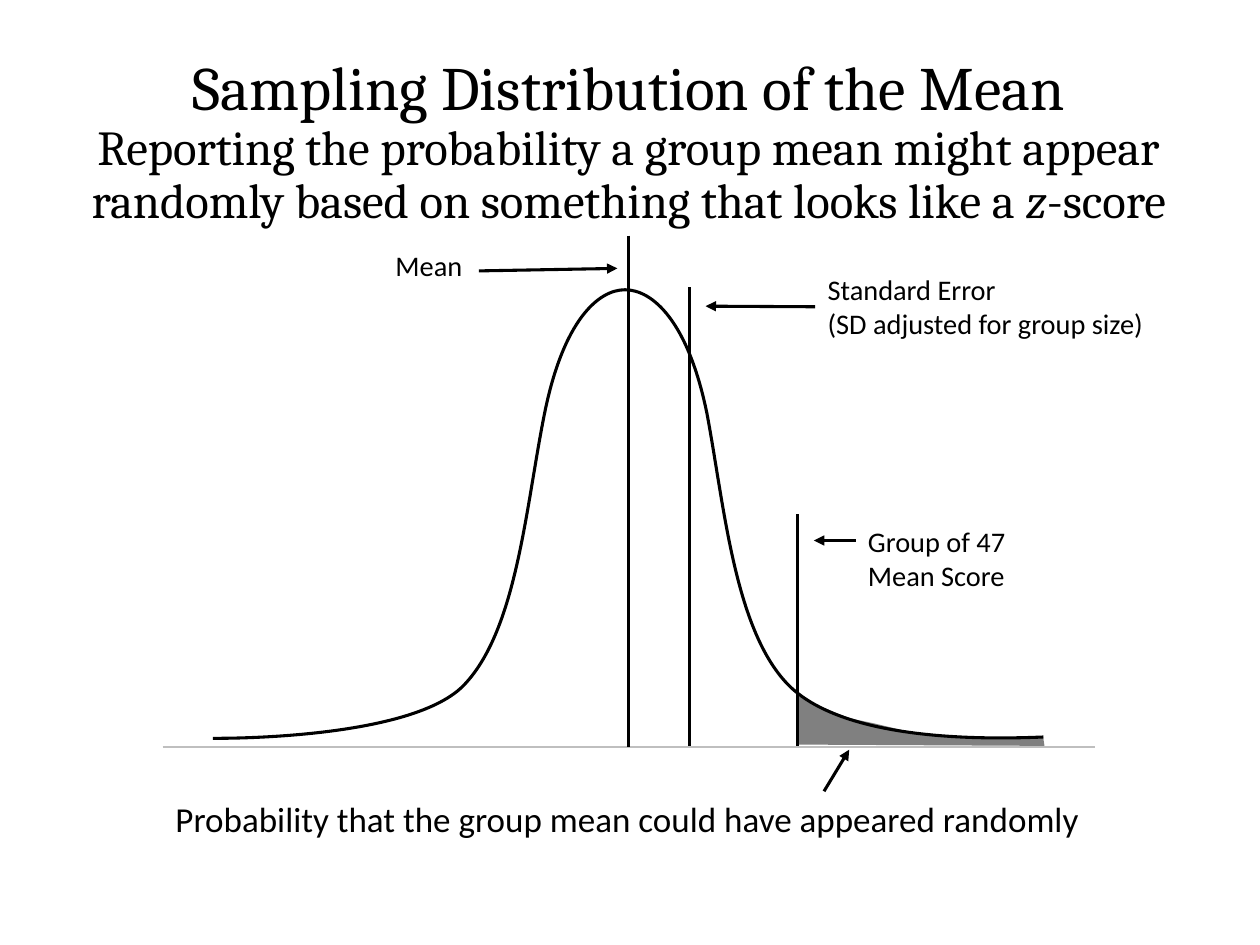
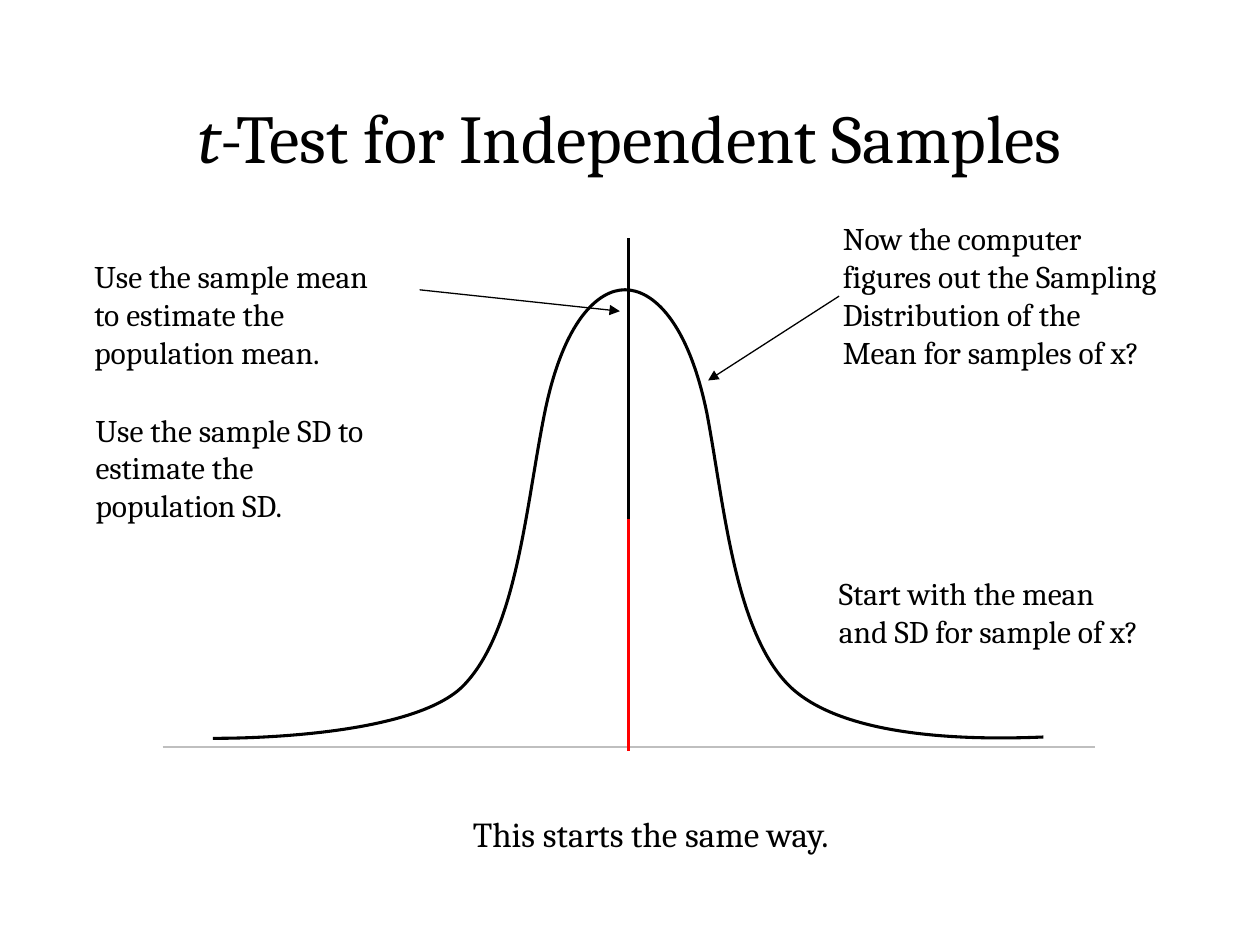
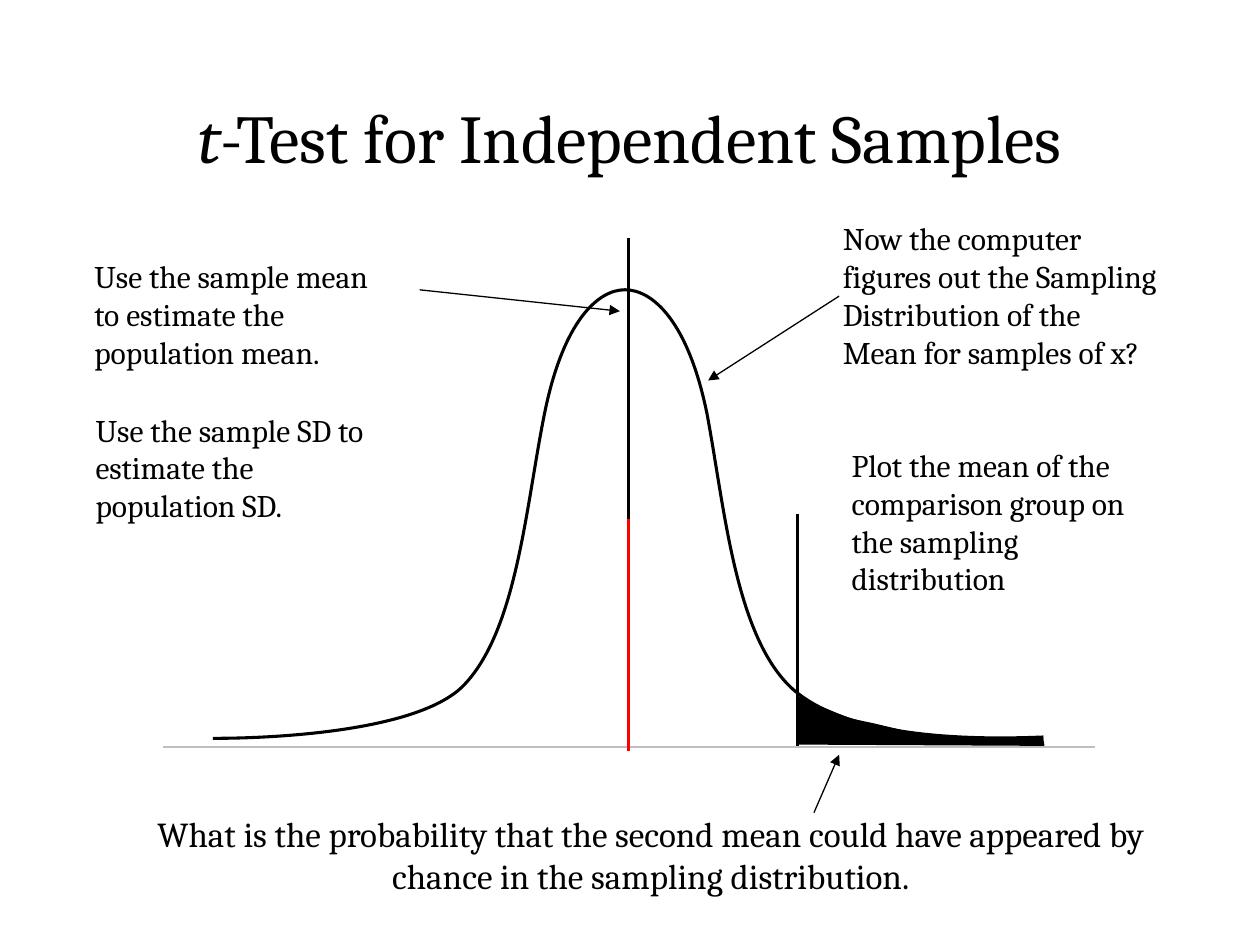
from dataclasses import dataclass

from lxml.etree import SubElement
from pptx import Presentation
from pptx.dml.color import RGBColor
from pptx.enum.shapes import MSO_CONNECTOR
from pptx.enum.text import MSO_ANCHOR, MSO_AUTO_SIZE, PP_ALIGN
from pptx.oxml.ns import qn
from pptx.util import Inches, Pt


@dataclass(frozen=True)
class Theme:
    ink: RGBColor = RGBColor(0x00, 0x00, 0x00)
    axis: RGBColor = RGBColor(0xBF, 0xBF, 0xBF)
    tail: RGBColor = RGBColor(0x80, 0x80, 0x80)
    accent: RGBColor = RGBColor(0xFF, 0x00, 0x00)
    serif: str = "Cambria"
    sans: str = "Calibri"
    title: float = 39.1
    long_title: float = 35.2
    subtitle: float = 27.9
    caption: float = 20
    note: float = 18
    label: float = 16.2
    bold_line: float = 1.75
    thin_line: float = 0.75
    axis_line: float = 1


theme = Theme()


def add_label(slide, text, box, size, font, alignment=PP_ALIGN.LEFT):
    shape = slide.shapes.add_textbox(*map(Inches, box))
    text_frame = shape.text_frame
    text_frame.text = text
    text_frame.word_wrap = True
    text_frame.auto_size = MSO_AUTO_SIZE.SHAPE_TO_FIT_TEXT
    paragraph = text_frame.paragraphs[0]
    paragraph.alignment = alignment
    for run in paragraph.runs:
        run.font.name = font
        run.font.size = Pt(size)
        run.font.color.rgb = theme.ink
    return shape


def add_line(slide, start, end, width=theme.bold_line, color=theme.ink, arrow=False):
    connector = slide.shapes.add_connector(
        MSO_CONNECTOR.STRAIGHT, *map(Inches, start + end)
    )
    connector.line.color.rgb = color
    connector.line.width = Pt(width)
    if arrow:
        SubElement(connector.line._get_or_add_ln(), qn("a:tailEnd"), type="triangle")
    SubElement(connector._element.spPr, qn("a:effectLst"))
    return connector


presentation = Presentation()
presentation.slide_width = Inches(10)
presentation.slide_height = Inches(7.5)

test_title = [("t", theme.title, True), ("-Test for Independent Samples", theme.title, False)]
titles = [
    (
        (0.53, 0.41, 8.92, 1.45),
        [
            ("Sampling Distribution of the Mean\v", theme.long_title, False),
            (
                "Reporting the probability a group mean might appear randomly "
                "based on something that looks like a ",
                theme.subtitle,
                False,
            ),
            ("z", theme.subtitle, True),
            ("-score", theme.subtitle, False),
        ],
    ),
    ((0.69, 0.4, 8.62, 1.45), test_title),
    ((0.69, 0.4, 8.62, 1.45), test_title),
]
tail_fills = [theme.tail, None, theme.ink]
mean_x = 4.99
score_x = 6.33
axis_y = 5.93

tail_outline = [
    (score_x, 5.91), (score_x, 5.52), (6.45, 5.58), (6.57, 5.63), (6.74, 5.7),
    (6.93, 5.74), (7.31, 5.83), (7.57, 5.85), (7.84, 5.85), (8.12, 5.85),
    (8.28, 5.85), (8.29, 5.92),
]
curve_start = (8.28, 5.85)
curve_segments = [
    [(7.79, 5.87), (6.72, 5.88), (6.27, 5.45)],
    [(5.83, 5.02), (5.75, 4.02), (5.61, 3.28)],
    [(5.46, 2.55), (5.18, 2.3), (4.96, 2.3)],
    [(4.75, 2.3), (4.47, 2.54), (4.32, 3.29)],
    [(4.17, 4.04), (4.1, 5.02), (3.67, 5.45)],
    [(3.23, 5.88), (1.69, 5.86), (1.69, 5.86)],
]
curve_anchors = [curve_start] + [segment[-1] for segment in curve_segments]

for (title_box, title_runs), tail_fill in zip(titles, tail_fills):
    slide = presentation.slides.add_slide(presentation.slide_layouts[5])
    title = slide.shapes.title
    title.left, title.top, title.width, title.height = map(Inches, title_box)
    text_frame = title.text_frame
    text_frame.word_wrap = True
    text_frame.auto_size = MSO_AUTO_SIZE.NONE
    text_frame.vertical_anchor = MSO_ANCHOR.MIDDLE
    paragraph = text_frame.paragraphs[0]
    paragraph.alignment = PP_ALIGN.CENTER
    paragraph.line_spacing = 0.9
    for text, size, italic in title_runs:
        run = paragraph.add_run()
        run.text = text.rstrip("\v")
        run.font.name = theme.serif
        run.font.size = Pt(size)
        run.font.italic = italic
        run.font.color.rgb = theme.ink
        if text.endswith("\v"):
            paragraph.add_line_break()

    if tail_fill is not None:
        vertices = [(Inches(x), Inches(y)) for x, y in tail_outline]
        builder = slide.shapes.build_freeform(*vertices[0], scale=1.0)
        builder.add_line_segments(vertices[1:], close=True)
        tail = builder.convert_to_shape()
        tail.shadow.inherit = False
        tail.fill.solid()
        tail.fill.fore_color.rgb = tail_fill
        tail.line.fill.background()
        add_line(slide, (score_x, 4.08), (score_x, 5.92))

    add_line(slide, (1.29, axis_y), (8.69, axis_y), theme.axis_line, theme.axis)

    vertices = [(Inches(x), Inches(y)) for x, y in curve_anchors]
    builder = slide.shapes.build_freeform(*vertices[0], scale=1.0)
    builder.add_line_segments(vertices[1:], close=False)
    curve = builder.convert_to_shape()
    curve.shadow.inherit = False
    curve.fill.background()
    curve.line.color.rgb = theme.ink
    curve.line.width = Pt(theme.bold_line)
    straight_segments = list(curve._element.iter(qn("a:lnTo")))
    for straight, segment in zip(straight_segments, curve_segments):
        straight.tag = qn("a:cubicBezTo")
        straight.remove(straight[0])
        for x, y in segment:
            SubElement(
                straight,
                qn("a:pt"),
                x=str(Inches(x) - curve.left),
                y=str(Inches(y) - curve.top),
            )

distribution_slide, start_slide, comparison_slide = presentation.slides

add_line(distribution_slide, (mean_x, 1.87), (mean_x, axis_y))
add_line(distribution_slide, (5.47, 2.28), (5.47, 5.92))
labels = [
    ("Mean", (3.04, 1.92, 1.51, 0.37)),
    ("Group of 47 Mean Score", (6.79, 4.11, 1.81, 0.65)),
    ("Standard Error \v(SD adjusted for group size)", (6.47, 2.11, 2.77, 0.65)),
]
for text, box in labels:
    label = add_label(distribution_slide, text, box, theme.label, theme.sans)
error_arrow = add_line(distribution_slide, (6.47, 2.43), (5.6, 2.43), arrow=True)
error_arrow.begin_connect(label, 1)
for start, end in [
    ((3.8, 2.15), (4.9, 2.13)),
    ((6.79, 4.29), (6.46, 4.29)),
    ((6.54, 6.28), (6.74, 5.95)),
]:
    add_line(distribution_slide, start, end, arrow=True)
add_label(
    distribution_slide,
    "Probability that the group mean could have appeared randomly",
    (0.98, 6.28, 8, 0.44),
    theme.caption,
    theme.sans,
    PP_ALIGN.CENTER,
)

shared_notes = [
    ("Use the sample mean to estimate the population mean.", (0.65, 1.99, 2.61, 1.01)),
    ("Use the sample SD to estimate the population SD.", (0.66, 3.21, 2.59, 1.01)),
    (
        "Now the computer figures out the Sampling Distribution of the Mean for samples of x?",
        (6.59, 1.69, 2.72, 1.31),
    ),
]
test_slides = [
    (
        start_slide,
        ("Start with the mean and SD for sample of x?", (6.56, 4.51, 2.59, 0.71)),
        ("This starts the same way.", (0.74, 6.4, 8.85, 0.44)),
    ),
    (
        comparison_slide,
        (
            "Plot the mean of the comparison group on the sampling distribution",
            (6.66, 3.49, 2.59, 1.31),
        ),
        (
            "What is the probability that the second mean could have appeared by "
            "chance in the sampling distribution.",
            (0.74, 6.4, 8.85, 0.77),
        ),
    ),
]
for slide, note, (caption, caption_box) in test_slides:
    add_line(slide, (mean_x, 1.89), (mean_x, 5.95))
    add_line(slide, (mean_x, 4.12), (mean_x, 5.96), color=theme.accent)
    for text, box in shared_notes + [note]:
        add_label(slide, text, box, theme.note, theme.serif)
    for start, end in [((3.33, 2.3), (4.92, 2.47)), ((6.66, 2.35), (5.62, 3.02))]:
        add_line(slide, start, end, theme.thin_line, arrow=True)
    add_label(slide, caption, caption_box, theme.caption, theme.serif, PP_ALIGN.CENTER)
add_line(comparison_slide, (6.46, 6.45), (6.66, 5.99), theme.thin_line, arrow=True)

presentation.save("out.pptx")
